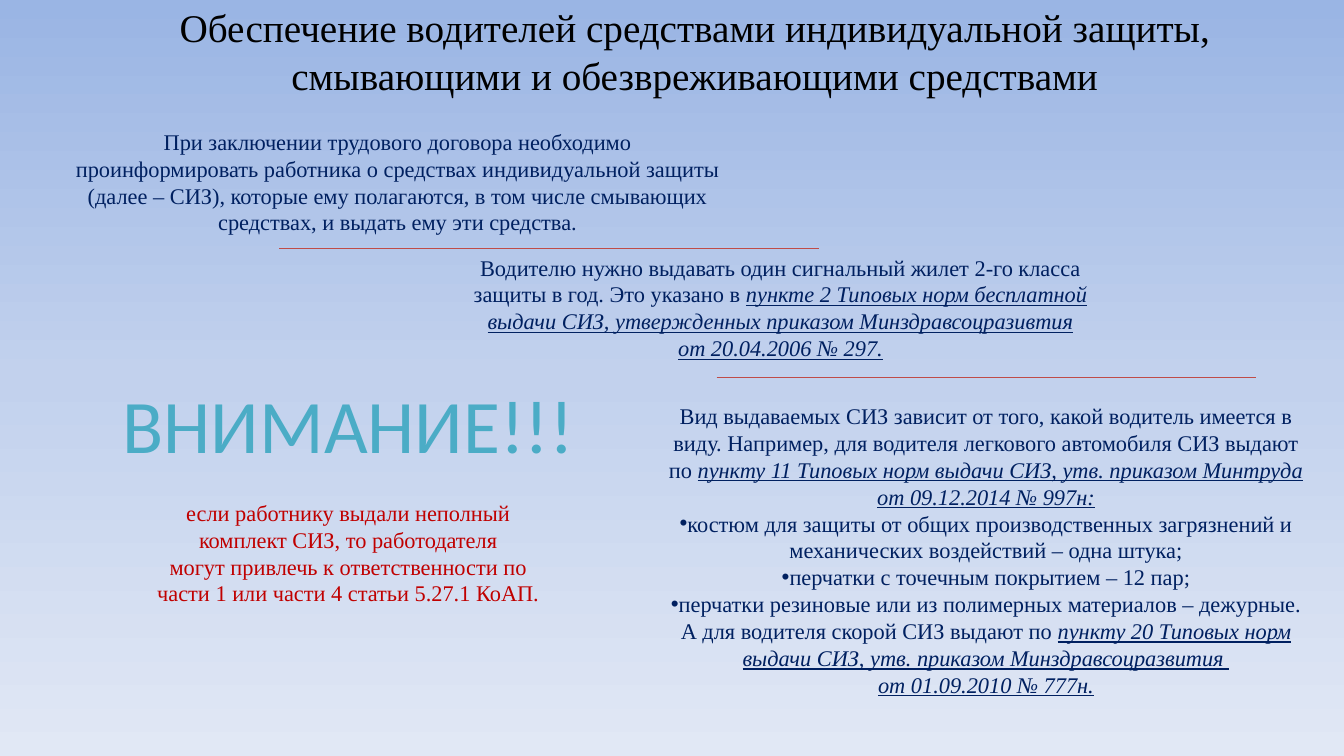
import copy

import pptx
import pptx.dml.color
import pptx.enum.shapes
import pptx.enum.text
import pptx.util
from lxml import etree
from pptx.oxml.ns import qn

Cm = pptx.util.Cm
Pt = pptx.util.Pt
RGBColor = pptx.dml.color.RGBColor

BLACK = RGBColor(0x00, 0x00, 0x00)
NAVY = RGBColor(0x00, 0x20, 0x60)
RED = RGBColor(0xC0, 0x00, 0x00)
TEAL = RGBColor(0x4B, 0xAC, 0xC6)
RULE = RGBColor(0xBF, 0x4C, 0x48)
SKY = [
    (0, RGBColor(0x9A, 0xB5, 0xE4)),
    (0.5, RGBColor(0xC2, 0xD1, 0xED)),
    (1, RGBColor(0xE1, 0xE8, 0xF5)),
]
BODY_WIDTH = 16.94
RULE_WIDTH = 13.6


class Builder:
    """Holds the text style and the slide being built; lengths in cm."""

    def __init__(self, s, font="Times New Roman", size=16, color=NAVY):
        self.s = s
        self.font = font
        self.size = size
        self.color = color

    def background(self, stops):
        fill = self.s.background.fill
        fill.gradient()
        fill.gradient_angle = 270
        gs_list = self.s.element.find(".//" + qn("a:gsLst"))
        while len(gs_list) < len(stops):
            gs_list.append(copy.deepcopy(gs_list[0]))
        for gs, (position, color) in zip(fill.gradient_stops, stops):
            gs.position = position
            gs.color.rgb = color

    def text(self, x, y, w, h, paragraphs, font=None, size=None, color=None, wrap=True):
        """Each paragraph is a list of runs; every second run is a citation."""
        tf = self.s.shapes.add_textbox(Cm(x), Cm(y), Cm(w), Cm(h)).text_frame
        tf.word_wrap = wrap
        for i, runs in enumerate(paragraphs):
            p = tf.add_paragraph() if i else tf.paragraphs[0]
            p.alignment = pptx.enum.text.PP_ALIGN.CENTER
            p.font.name = font or self.font
            p.font.size = Pt(size or self.size)
            p.font.color.rgb = color or self.color
            for j, words in enumerate(runs):
                if not words:
                    continue
                # A vertical tab marks a line break inside the run
                for k, line in enumerate(words.split("\v")):
                    if k:
                        p.add_line_break()
                    r = p.add_run()
                    r.text = line
                    if j % 2:
                        r.font.italic = True
                        r.font.underline = True
        return tf

    def bullet(self, p):
        pPr = p._p.get_or_add_pPr()
        pPr.set("marL", "0")
        pPr.set("indent", "0")
        mark = etree.Element(qn("a:buChar"), char="•")
        face = etree.Element(qn("a:buFont"), typeface="Arial")
        pPr.insert(0, mark)
        pPr.insert(0, face)

    def rule(self, x, y):
        line = self.s.shapes.add_connector(
            pptx.enum.shapes.MSO_CONNECTOR.STRAIGHT,
            Cm(x), Cm(y), Cm(x + RULE_WIDTH), Cm(y))
        line.line.color.rgb = RULE
        line.line.width = Pt(0.75)
        etree.SubElement(line._element.spPr, qn("a:effectLst"))


def main():
    prs = pptx.Presentation()
    prs.slide_width = Cm(33.87)
    prs.slide_height = Cm(19.05)
    b = Builder(prs.slides.add_slide(prs.slide_layouts[6]))
    b.background(SKY)

    # Title
    b.text(4.27, -0.03, 26.47, 2.64, [[
        "Обеспечение водителей средствами индивидуальной защиты, "
        "смывающими и обезвреживающими средствами"]], size=28, color=BLACK)

    # Informing the employee
    b.text(1.55, 3.1, BODY_WIDTH, 3, [[
        "При заключении трудового договора необходимо проинформировать "
        "работника о средствах индивидуальной защиты (далее – СИЗ), которые "
        "ему полагаются, в том числе смывающих средствах, и выдать ему эти "
        "средства."]])
    b.rule(7.04, 6.27)

    # Signal vest
    b.text(11.2, 6.27, BODY_WIDTH, 3.68, [[
        "Водителю нужно выдавать один сигнальный жилет 2-го класса защиты "
        "в год. Это указано в ",
        "пункте 2 Типовых норм бесплатной выдачи СИЗ, утвержденных приказом "
        "Минздравсоцразивтия\vот 20.04.2006 № 297."]])
    b.rule(18.06, 9.52)

    # Equipment by type of driver
    tf = b.text(16.38, 10.01, BODY_WIDTH, 9.32, [
        ["Вид выдаваемых СИЗ зависит от того, какой водитель имеется в виду. "
         "Например, для водителя легкового автомобиля СИЗ выдают по ",
         "пункту 11 Типовых норм выдачи СИЗ, утв. приказом Минтруда "
         "от 09.12.2014 № 997н:"],
        ["костюм для защиты от общих производственных загрязнений и "
         "механических воздействий – одна штука;"],
        ["перчатки с точечным покрытием – 12 пар;"],
        ["перчатки резиновые или из полимерных материалов – дежурные."],
        ["А для водителя скорой СИЗ выдают по ",
         "пункту 20 Типовых норм выдачи СИЗ, утв. приказом "
         "Минздравсоцразвития "],
        ["", "от 01.09.2010 № 777н."],
    ])
    for p in tf.paragraphs[1:4]:
        b.bullet(p)

    # Warning
    b.text(2.64, 9.4, 12.29, 2.57, [["ВНИМАНИЕ!!!"]],
           font="Calibri", size=54, color=TEAL, wrap=False)
    b.text(3.35, 12.45, 10.85, 4.37, [[
        "если работнику выдали неполный комплект СИЗ, то работодателя\v"
        "могут привлечь к ответственности по части 1 или части 4 "
        "статьи 5.27.1 КоАП."]], color=RED)

    prs.save("out.pptx")


if __name__ == "__main__":
    main()
